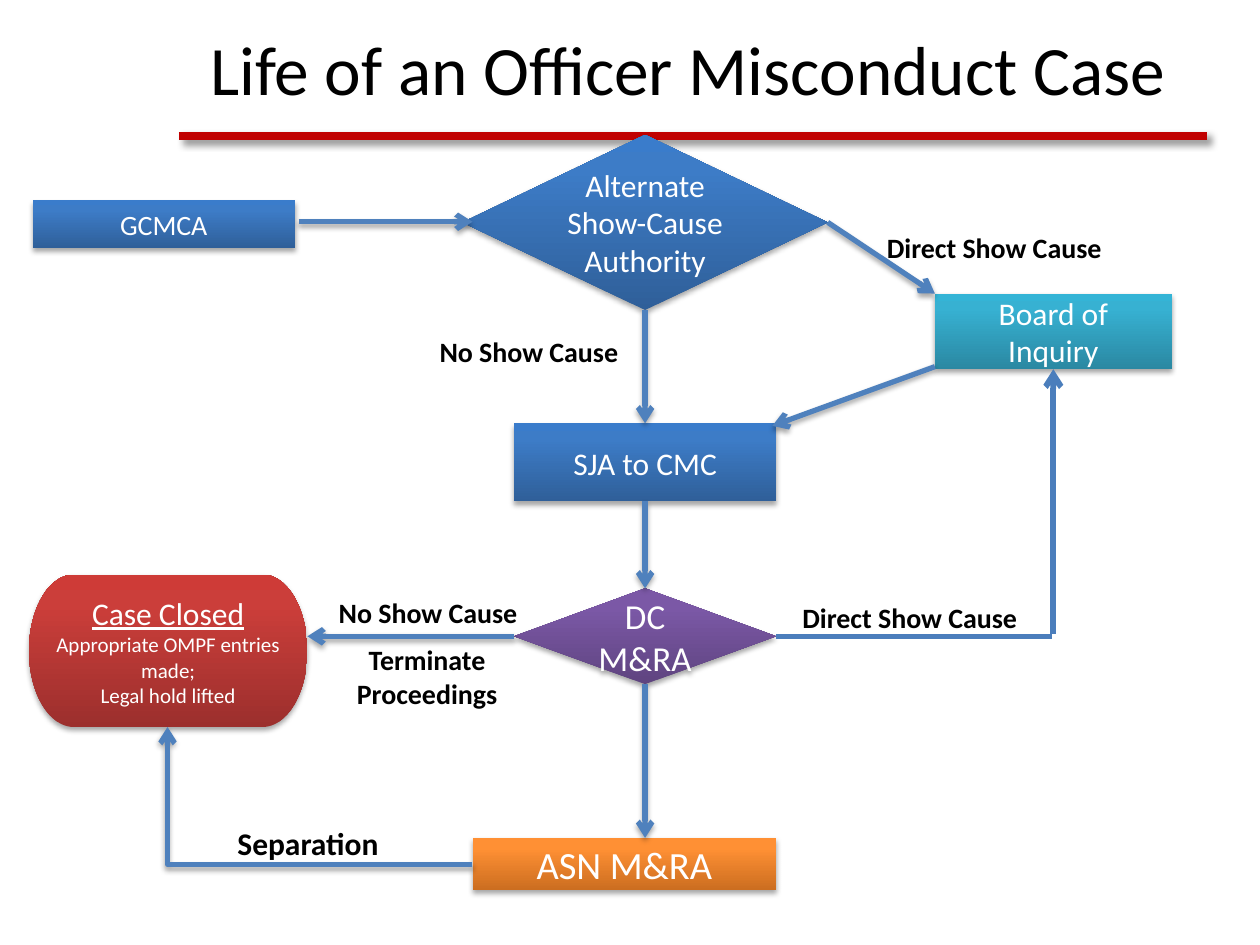
from copy import deepcopy
from lxml.etree import SubElement
from pptx import Presentation
from pptx.dml.color import RGBColor
from pptx.enum.shapes import MSO_CONNECTOR as LINK, MSO_SHAPE as SHAPE
from pptx.enum.text import MSO_ANCHOR as ANCHOR, PP_ALIGN as ALIGN
from pptx.oxml.ns import qn
from pptx.util import Inches, Pt

TITLE = "Life of an Officer Misconduct Case"
BLUE = ("2F5F99", "3D7CC7", "3A7CCB")
RED = ("9C2F2D", "CB3E3A", "CE3B37")
TEAL = ("2A88A2", "37B1D2", "34B4D6")
PURPLE = ("5F4480", "7B58A6", "7C57A8")
ORANGE = ("CC6E20", "FF9034", "FF9136")
LINK_BLUE, RETURN_BLUE = "4F81BD", "4B7EBC"
TOP, LEFT, BOTTOM, RIGHT = range(4)

STEPS = {
    "closed": (SHAPE.FLOWCHART_TERMINATOR, (0.23, 4.56, 2.21, 1.21), RED, 12,
               ["Case Closed", "Appropriate OMPF entries made;", "Legal hold lifted"]),
    "authority": (SHAPE.FLOWCHART_DECISION, (3.67, 1.07, 2.9, 1.39), BLUE, 18,
                  ["Alternate Show-Cause Authority"]),
    "board": (SHAPE.FLOWCHART_PREDEFINED_PROCESS, (7.42, 2.33, 1.88, 0.6), TEAL, 18,
              ["Board of Inquiry"]),
    "deputy": (SHAPE.FLOWCHART_DECISION, (4.08, 4.67, 2.08, 0.76), PURPLE, 20, ["DC M&RA"]),
    "secretary": (SHAPE.FLOWCHART_PREDEFINED_PROCESS, (3.75, 6.65, 2.41, 0.41), ORANGE, 22,
                  ["ASN M&RA"]),
    "advocate": (SHAPE.FLOWCHART_PROCESS, (4.08, 3.36, 2.08, 0.62), BLUE, 18, ["SJA to CMC"]),
    "convening": (SHAPE.FLOWCHART_PROCESS, (0.26, 1.59, 2.08, 0.38), BLUE, 16, ["GCMCA"]),
}

FLOWS = [
    (("deputy", LEFT), (2.44, 5.05)),
    (("deputy", BOTTOM), (5.12, 6.65)),
    (("authority", BOTTOM), ("advocate", TOP)),
    (("advocate", BOTTOM), ("deputy", TOP)),
    ((2.37, 1.76), (3.75, 1.76)),
    ((7.42, 2.91), (6.13, 3.38)),
    (("authority", RIGHT), (7.42, 2.33)),
]

LABELS = [
    (["Terminate", "Proceedings"], (2.44, 5.05, 1.9, 0.67), 16, ALIGN.CENTER),
    (["Separation"], (1.61, 6.49, 1.67, 0.4), 18, ALIGN.CENTER),
    (["Direct Show Cause"], (6.27, 4.72, 1.95, 0.37), 16, ALIGN.LEFT),
    (["Direct Show Cause"], (6.94, 1.78, 1.95, 0.37), 16, ALIGN.LEFT),
    (["No Show Cause"], (3.39, 2.61, 1.8, 0.37), 16, ALIGN.LEFT),
    (["No Show Cause"], (2.59, 4.68, 1.8, 0.37), 16, ALIGN.LEFT),
]


def rgb(value):
    return RGBColor.from_string(value)


def write(shape, lines, size, color="000000", bold=False, align=ALIGN.CENTER,
          anchor=ANCHOR.TOP, heading_size=None):
    frame = shape.text_frame
    frame.word_wrap = True
    frame.vertical_anchor = anchor
    for index, line in enumerate(lines):
        paragraph = frame.add_paragraph() if index else frame.paragraphs[0]
        paragraph.alignment = align
        run = paragraph.add_run()
        run.text = line
        heading = heading_size and index == 0
        font = run.font
        font.name, font.bold = "Calibri", bold
        font.size = Pt(heading_size if heading else size)
        font.underline = bool(heading)
        font.color.rgb = rgb(color)


def add_shadow(properties, opacity=35, blur=3.1, distance=1.8, angle=90):
    effects = properties.find(qn("a:effectLst"))
    shadow = SubElement(effects, qn("a:outerShdw"), blurRad=str(Pt(blur)),
                        dist=str(Pt(distance)), dir=str(angle * 60000), rotWithShape="0")
    black = SubElement(shadow, qn("a:srgbClr"), val="000000")
    SubElement(black, qn("a:alpha"), val=str(opacity * 1000))


def add_text(lines, box, size, **style):
    write(slide.shapes.add_textbox(*map(Inches, box)), lines, size, **style)


def add_step(kind, box, colors, size, lines):
    step = slide.shapes.add_shape(kind, *map(Inches, box))
    step.line.fill.background()
    step.fill.gradient()
    step.fill.gradient_angle = 90
    stop_list = next(step._element.spPr.iter(qn("a:gsLst")))
    stop_list.append(deepcopy(stop_list[-1]))
    for stop, position, color in zip(step.fill.gradient_stops, (0, 0.8, 1), colors):
        stop.position = position
        stop.color.rgb = rgb(color)
    step.shadow.inherit = False
    add_shadow(step._element.spPr)
    write(step, lines, size, color="FFFFFF", anchor=ANCHOR.MIDDLE,
          heading_size=18 if len(lines) > 1 else None)
    return step


def add_link(start, end, color=LINK_BLUE, width=3, arrow=True, shadow=True,
             kind=LINK.STRAIGHT, **shadow_style):
    points = [(0, 0) if isinstance(p[0], str) else p for p in (start, end)]
    link = slide.shapes.add_connector(kind, *[Inches(v) for p in points for v in p])
    for place, join in ((start, link.begin_connect), (end, link.end_connect)):
        if isinstance(place[0], str):
            join(steps[place[0]], place[1])
    link.line.color.rgb = rgb(color)
    link.line.width = Pt(width)
    if arrow:
        SubElement(link.line._get_or_add_ln(), qn("a:tailEnd"), type="arrow")
    properties = link._element.spPr
    SubElement(properties, qn("a:effectLst"))
    if shadow:
        add_shadow(properties, **shadow_style)
    return link


prs = Presentation()
prs.slide_width, prs.slide_height = Inches(10), Inches(7.5)
slide = prs.slides.add_slide(prs.slide_layouts[6])

add_link((1.42, 1.08), (9.58, 1.08), color="C00000", width=5, arrow=False,
         opacity=40, blur=4, distance=3, angle=45)
add_text([TITLE], (1.42, 0.08, 8.08, 0.92), 39.6, anchor=ANCHOR.MIDDLE)

steps = {name: add_step(*step) for name, step in STEPS.items()}
for start, end in FLOWS:
    add_link(start, end)

separation = add_link((3.75, 6.86), (1.33, 5.77), kind=LINK.ELBOW)
separation._element.spPr.find(qn("a:prstGeom")).set("prst", "bentConnector2")
add_link(("deputy", RIGHT), (8.35, 5.05), color=RETURN_BLUE, width=2.75,
         arrow=False, shadow=False)
add_link((8.36, 5.03), ("board", BOTTOM), color=RETURN_BLUE, width=3.25, shadow=False)

for lines, box, size, align in LABELS:
    add_text(lines, box, size, bold=True, align=align)

prs.save("out.pptx")
